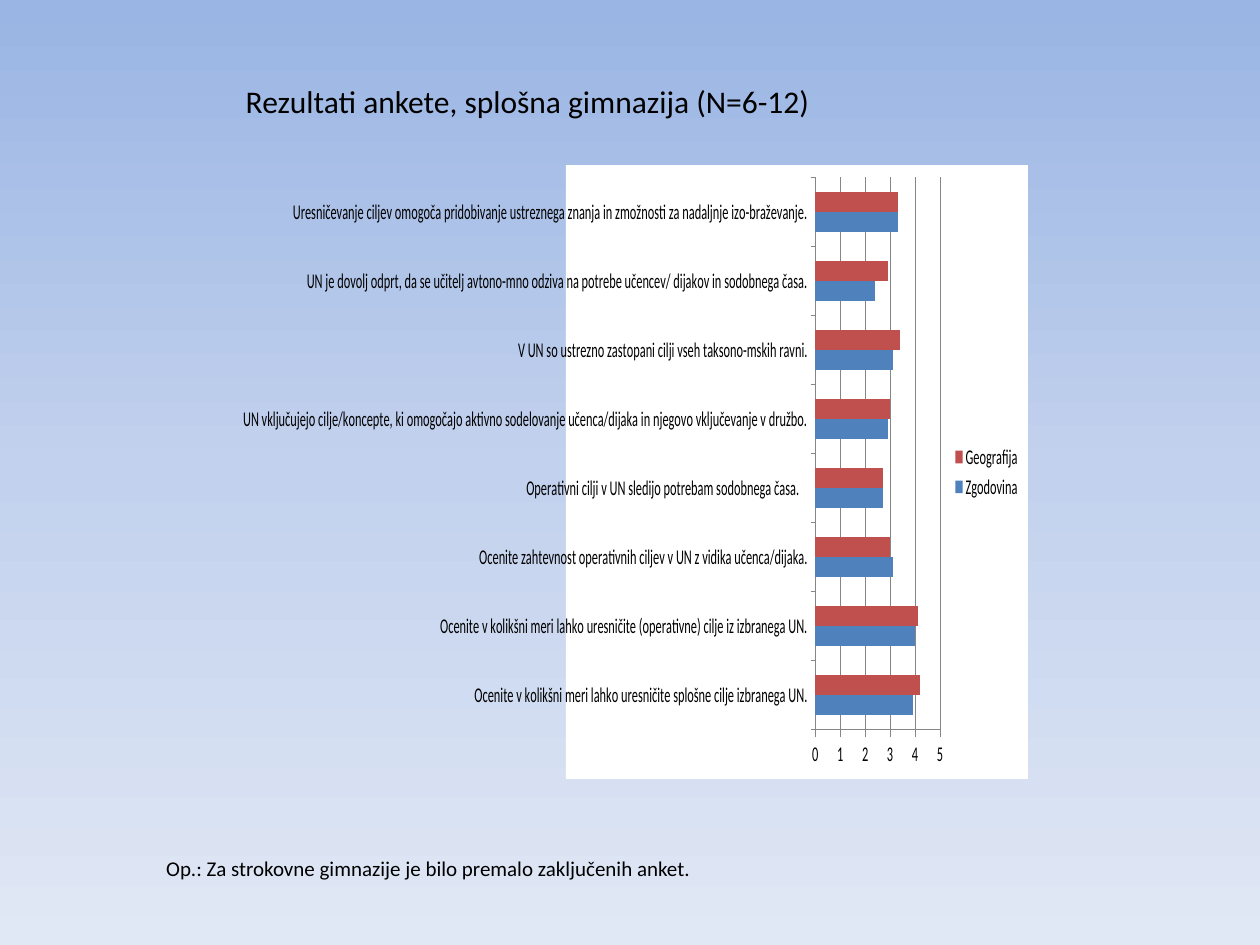
from copy import deepcopy
from lxml import etree
from pptx import Presentation, util as u
from pptx.chart.data import CategoryChartData
from pptx.dml.color import RGBColor
from pptx.enum import chart as ch, text
from pptx.oxml import parse_xml
from pptx.oxml.ns import nsdecls, qn

HUES = {"top": "9AB5E4", "mid": "C2D1ED", "low": "E1E8F5", "ink": "000000",
        "paper": "FFFFFF", "grid": "868686", "blue": "4F81BD", "red": "C0504D"}
FONT = "Calibri"
ITEMS = [
    ("Ocenite v kolikšni meri lahko uresničite splošne cilje izbranega UN.", 3.9, 4.2),
    ("Ocenite v kolikšni meri lahko uresničite (operativne) cilje iz izbranega UN.", 4, 4.1),
    ("Ocenite zahtevnost operativnih ciljev v UN z vidika učenca/dijaka.", 3.1, 3),
    ("Operativni cilji v UN sledijo potrebam sodobnega časa.   ", 2.7, 2.7),
    ("UN vključujejo cilje/koncepte, ki omogočajo aktivno sodelovanje učenca/dijaka "
     "in njegovo vključevanje v družbo.", 2.9, 3),
    ("V UN so ustrezno zastopani cilji vseh taksono-mskih ravni.", 3.1, 3.4),
    ("UN je dovolj odprt, da se učitelj avtono-mno odziva na potrebe učencev/ dijakov "
     "in sodobnega časa.", 2.4, 2.9),
    ("Uresničevanje ciljev omogoča pridobivanje ustreznega znanja in zmožnosti za "
     "nadaljnje izo-braževanje.", 3.3, 3.3),
]


def hue(name):
    return RGBColor.from_string(HUES[name])


def style(font, size):
    font.name = FONT
    font.size = u.Pt(size)
    font.bold = False
    font.color.rgb = hue("ink")


def paint(slide):
    fill = slide.background.fill
    fill.gradient()
    fill.gradient_angle = 270
    stops = next(slide.element.iter(qn("a:gsLst")))
    stops.append(deepcopy(stops[-1]))
    for stop, name, spot in zip(fill.gradient_stops, ("top", "mid", "low"), (0, 0.5, 1)):
        stop.color.rgb = hue(name)
        stop.position = spot


def write(shape, box, words, size, wrap):
    shape.left, shape.top, shape.width, shape.height = box
    frame = shape.text_frame
    frame.text = words
    frame.word_wrap = wrap
    frame.auto_size = text.MSO_AUTO_SIZE.SHAPE_TO_FIT_TEXT
    frame.vertical_anchor = text.MSO_ANCHOR.TOP
    para = frame.paragraphs[0]
    para.alignment = text.PP_ALIGN.LEFT
    style(para.runs[0].font, size)


def place(chart, x, y, w, h):
    plot = next(chart.element.iter(qn("c:plotArea")))
    for old in plot.findall(qn("c:layout")):
        plot.remove(old)
    layout = etree.Element(qn("c:layout"))
    manual = etree.SubElement(layout, qn("c:manualLayout"))
    rules = {"layoutTarget": "inner", "xMode": "edge", "yMode": "edge",
             "x": x, "y": y, "w": w, "h": h}
    for tag, val in rules.items():
        etree.SubElement(manual, qn("c:" + tag)).set("val", str(val))
    plot.insert(0, layout)


def back(chart):
    props = parse_xml(
        f'<c:spPr {nsdecls("c", "a")}><a:solidFill><a:srgbClr val="{HUES["paper"]}"/>'
        '</a:solidFill><a:ln><a:noFill/></a:ln></c:spPr>')
    chart.element.find(qn("c:chart")).addnext(props)


def survey(slide, box):
    names, past, place_vals = zip(*ITEMS)
    data = CategoryChartData()
    data.categories = names
    data.add_series("Zgodovina", past)
    data.add_series("Geografija", place_vals)
    chart = slide.shapes.add_chart(ch.XL_CHART_TYPE.BAR_CLUSTERED, *box, data).chart
    style(chart.font, 12)
    back(chart)
    place(chart, 0.54, 0.02, 0.27, 0.9)
    chart.has_title = False
    chart.has_legend = True
    chart.legend.position = ch.XL_LEGEND_POSITION.RIGHT
    chart.legend.include_in_layout = False

    bars = chart.plots[0]
    bars.gap_width = 150
    bars.overlap = 0
    bars.vary_by_categories = False
    for series, name in zip(bars.series, ("blue", "red")):
        series.format.fill.solid()
        series.format.fill.fore_color.rgb = hue(name)

    scale = chart.value_axis
    scale.minimum_scale, scale.maximum_scale, scale.major_unit = 0, 5, 1
    scale.has_major_gridlines = True
    for line in (scale.format.line, scale.major_gridlines.format.line,
                 chart.category_axis.format.line):
        line.color.rgb = hue("grid")
        line.width = u.Pt(0.75)
    for axis in (scale, chart.category_axis):
        axis.major_tick_mark = ch.XL_TICK_MARK.OUTSIDE


def cm(*sizes):
    return [u.Cm(size) for size in sizes]


def main():
    deck = Presentation()
    deck.slide_width, deck.slide_height = cm(25.4, 19.05)
    slide = deck.slides.add_slide(deck.slide_layouts[5])
    paint(slide)
    survey(slide, cm(4.9, 3.33, 15.82, 12.37))
    write(slide.shapes.title, cm(4.7, 1.52, 12.01, 1.02),
          "Rezultati ankete, splošna gimnazija (N=6-12)", 18, False)
    box = cm(3.1, 17.12, 16.99, 0.76)
    write(slide.shapes.add_textbox(*box), box,
          "Op.: Za strokovne gimnazije je bilo premalo zaključenih anket.", 12, True)
    deck.save("out.pptx")


if __name__ == "__main__":
    main()
